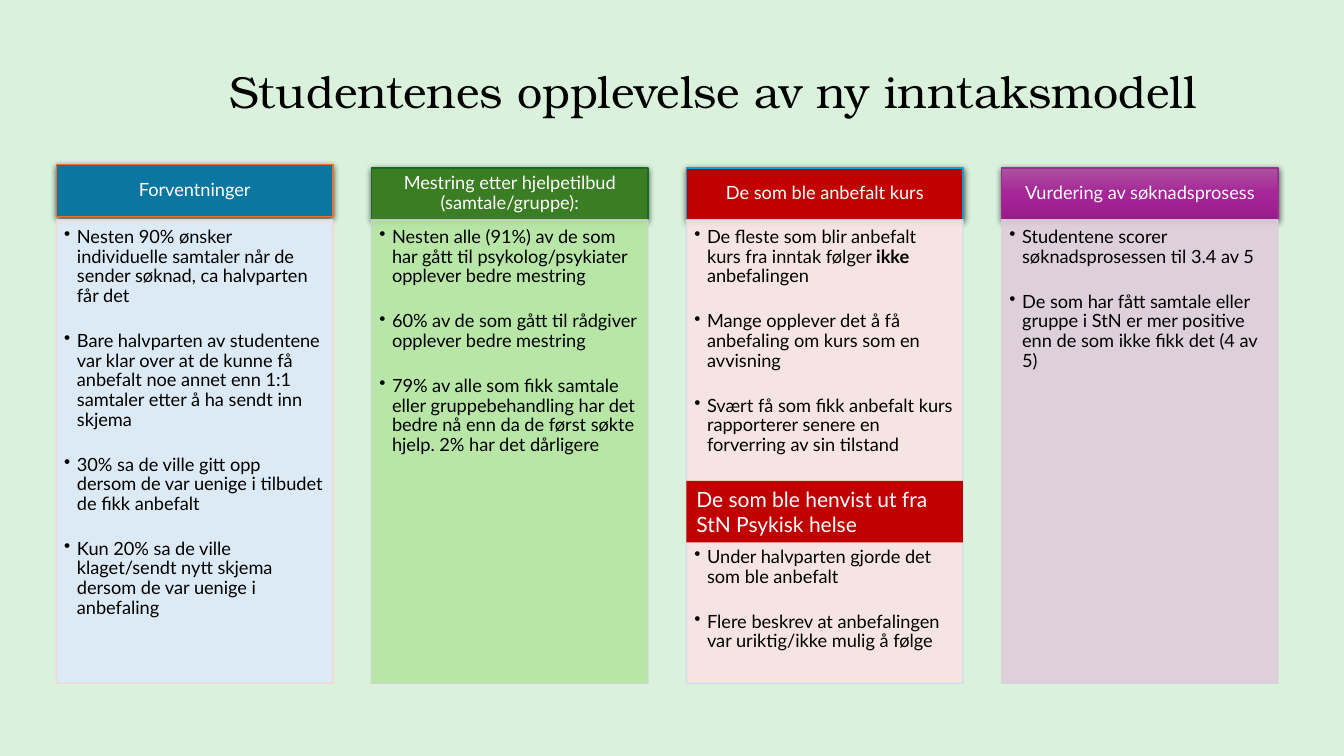
from copy import deepcopy

from pptx import Presentation
from pptx.dml.color import RGBColor
from pptx.enum.shapes import MSO_SHAPE
from pptx.enum.text import MSO_ANCHOR, PP_ALIGN
from pptx.oxml.ns import qn
from pptx.util import Cm, Pt
from lxml import etree

RECTANGLE = MSO_SHAPE.RECTANGLE
TOP, MIDDLE = MSO_ANCHOR.TOP, MSO_ANCHOR.MIDDLE
LEFT, CENTER = PP_ALIGN.LEFT, PP_ALIGN.CENTER

BACKGROUND = RGBColor(0xDA, 0xF2, 0xDB)
BLACK = RGBColor(0x00, 0x00, 0x00)
WHITE = RGBColor(0xFF, 0xFF, 0xFF)
BLUE = RGBColor(0x0B, 0x76, 0xA0)
ORANGE = RGBColor(0xE9, 0x71, 0x32)
PALE_BLUE = RGBColor(0xDC, 0xEA, 0xF7)
PALE_ORANGE = RGBColor(0xF7, 0xD5, 0xCE)
GREEN = RGBColor(0x3B, 0x7D, 0x23)
DARK_GREEN = RGBColor(0x19, 0x6B, 0x24)
PALE_GREEN = RGBColor(0xB4, 0xE5, 0xA2)
GREY_GREEN = RGBColor(0xCC, 0xD4, 0xCD)
RED = RGBColor(0xC0, 0x00, 0x00)
SKY = RGBColor(0x0F, 0x9E, 0xD5)
PALE_RED = RGBColor(0xF9, 0xE3, 0xE3)
PALE_SKY = RGBColor(0xCC, 0xDF, 0xEF)
PURPLE = RGBColor(0xA0, 0x2B, 0x93)
PALE_PURPLE = RGBColor(0xDF, 0xCD, 0xDC)
PURPLE_GRADIENT = [RGBColor(0xAC, 0x53, 0xA0), RGBColor(0xA6, 0x25, 0x98),
                   RGBColor(0x99, 0x1C, 0x8B)]

BODY_FONT, TITLE_FONT = "Lato", "TeX Gyre Bonum"
HEADER_HEIGHT = 1.31
COLUMN_TOP, COLUMN_HEIGHT = 4.23, 12.99
COLUMN_LEFT, COLUMN_WIDTH, COLUMN_PITCH = 1.42, 6.97, 7.94

COLUMNS = [
    {"heading": "Forventninger", "fill": BLUE, "line": ORANGE, "lift": 0.09,
     "body_fill": PALE_BLUE, "body_line": PALE_ORANGE,
     "points": [
         ["Nesten 90% ønsker individuelle samtaler når de sender søknad, ca halvparten får det"],
         ["Bare halvparten av studentene var klar over at de kunne få anbefalt noe annet "
          "enn 1:1 samtaler etter å ha sendt inn skjema"],
         ["30% sa de ville gitt opp dersom de var uenige i tilbudet de fikk anbefalt"],
         ["Kun 20% sa de ville klaget/sendt nytt skjema dersom de var uenige i anbefaling"]]},
    {"heading": "Mestring etter hjelpetilbud (samtale/gruppe):",
     "fill": GREEN, "line": DARK_GREEN,
     "body_fill": PALE_GREEN, "body_line": GREY_GREEN,
     "points": [
         ["Nesten alle (91%) av de som har gått til psykolog/psykiater opplever bedre mestring"],
         ["60% av de som gått til rådgiver opplever bedre mestring"],
         ["79% av alle som fikk samtale eller gruppebehandling har det bedre nå enn da "
          "de først søkte hjelp. 2% har det dårligere"]]},
    {"heading": "De som ble anbefalt kurs", "fill": RED, "line": SKY,
     "body_fill": PALE_RED, "body_line": PALE_SKY,
     "points": [
         ["De fleste som blir anbefalt kurs fra inntak følger ", "ikke", " anbefalingen"],
         ["Mange opplever det å få anbefaling om kurs som en avvisning"],
         ["Svært få som fikk anbefalt kurs rapporterer senere en forverring av sin tilstand"],
         ["Under halvparten gjorde det som ble anbefalt"],
         ["Flere beskrev at anbefalingen var uriktig/ikke mulig å følge"]],
     "after_subheading": 3,
     "subheading": "De som ble henvist ut fra StN Psykisk helse"},
    {"heading": "Vurdering av søknadsprosess", "fill": PURPLE_GRADIENT, "line": PURPLE,
     "body_fill": PALE_PURPLE, "body_line": PALE_PURPLE,
     "points": [
         ["Studentene scorer søknadsprosessen til 3.4 av 5"],
         ["De som har fått samtale eller gruppe i StN er mer positive enn de som ikke "
          "fikk det (4 av 5)"]]},
]


def add_run(paragraph, text, size, color, font=BODY_FONT, bold=False):
    """Append one formatted run to a paragraph."""
    run = paragraph.add_run()
    run.text = text
    run.font.size, run.font.name, run.font.bold = Pt(size), font, bold
    run.font.color.rgb = color


def set_frame(frame, anchor, insets=(0.25, 0.13, 0.25, 0.13)):
    """Set wrapping, anchor and insets of a text frame."""
    frame.word_wrap, frame.vertical_anchor = True, anchor
    (frame.margin_left, frame.margin_top,
     frame.margin_right, frame.margin_bottom) = map(Cm, insets)


def add_panel(slide, box, fill, line=None):
    """Add a plain rectangle with a solid or three-stop gradient fill."""
    panel = slide.shapes.add_shape(RECTANGLE, *map(Cm, box))
    panel.shadow.inherit = False
    if isinstance(fill, list):
        panel.fill.gradient()
        panel.fill.gradient_angle = 270
        stop_list = panel._element.spPr.find(qn("a:gradFill")).find(qn("a:gsLst"))
        stop_list.insert(1, deepcopy(stop_list[0]))
        for index, color in enumerate(fill):
            stop = panel.fill.gradient_stops[index]
            stop.position, stop.color.rgb = index / 2, color
    else:
        panel.fill.solid()
        panel.fill.fore_color.rgb = fill
    if line is None:
        panel.line.fill.background()
    else:
        panel.line.color.rgb, panel.line.width = line, Pt(1)
    return panel


def add_alpha(color_element, percent):
    """Give a colour element an opacity."""
    etree.SubElement(color_element, qn("a:alpha"), val=str(percent * 1000))


def add_header(slide, box, column):
    """Add a column heading with a soft shadow."""
    header = add_panel(slide, box, column["fill"], column["line"])
    effects = header._element.spPr.find(qn("a:effectLst"))
    shadow = etree.SubElement(effects, qn("a:outerShdw"), blurRad=str(Pt(4.5)),
                              dist=str(Pt(1.5)), dir="5400000", algn="ctr", rotWithShape="0")
    add_alpha(etree.SubElement(shadow, qn("a:srgbClr"), val=str(BLACK)), 63)
    set_frame(header.text_frame, MIDDLE, (0.26, 0.15, 0.26, 0.15))
    heading = header.text_frame.paragraphs[0]
    heading.alignment, heading.line_spacing = CENTER, 0.9
    add_run(heading, column["heading"], 13, WHITE)


def add_body(slide, box, column):
    """Add the translucent column body with its bullet points."""
    body = add_panel(slide, box, column["body_fill"], column["body_line"])
    for color in body._element.spPr.iter(qn("a:srgbClr")):
        add_alpha(color, 90)
    frame = body.text_frame
    set_frame(frame, TOP, (0.2, 0.2, 0.26, 0.28))
    for index, point in enumerate(column["points"]):
        paragraph = frame.paragraphs[0] if index == 0 else frame.add_paragraph()
        properties = paragraph._p.get_or_add_pPr()
        properties.set("marL", str(Cm(0.32)))
        properties.set("indent", str(-Cm(0.32)))
        etree.SubElement(properties, qn("a:buChar"), char="•")
        paragraph.alignment, paragraph.line_spacing = LEFT, 0.9
        paragraph.space_after = Pt(18)
        if index == column.get("after_subheading"):
            paragraph.space_before = Pt(48)
        for text in point:
            add_run(paragraph, text, 13, BLACK, bold=text == "ikke")


def add_subheading(slide, box, text):
    """Add a heading band inside a column."""
    band = add_panel(slide, box, RED)
    set_frame(band.text_frame, TOP)
    paragraph = band.text_frame.paragraphs[0]
    paragraph.alignment = LEFT
    add_run(paragraph, text, 15, WHITE)


def add_column(slide, box, column):
    """Place heading, body and any subheading in a column box."""
    left, top, width, height = box
    add_header(slide, (left, top - column.get("lift", 0), width, HEADER_HEIGHT), column)
    add_body(slide, (left, top + HEADER_HEIGHT, width, height - HEADER_HEIGHT), column)
    if "subheading" in column:
        add_subheading(slide, (left, top + 7.89, width, 1.55), column["subheading"])


def add_title(slide, box):
    """Add the slide title."""
    title = slide.shapes.add_textbox(*map(Cm, box))
    set_frame(title.text_frame, MIDDLE)
    paragraph = title.text_frame.paragraphs[0]
    paragraph.line_spacing = 0.9
    add_run(paragraph, "Studentenes opplevelse av ny inntaksmodell", 32, BLACK, TITLE_FONT)


def main():
    """Build and save the slide."""
    presentation = Presentation()
    presentation.slide_width, presentation.slide_height = Cm(33.87), Cm(19.05)
    slide = presentation.slides.add_slide(presentation.slide_layouts[6])
    slide.background.fill.solid()
    slide.background.fill.fore_color.rgb = BACKGROUND
    add_title(slide, (5.54, 1.35, 24.97, 2.03))
    for index, column in enumerate(COLUMNS):
        left = COLUMN_LEFT + index * COLUMN_PITCH
        add_column(slide, (left, COLUMN_TOP, COLUMN_WIDTH, COLUMN_HEIGHT), column)
    presentation.save("out.pptx")


if __name__ == "__main__":
    main()
